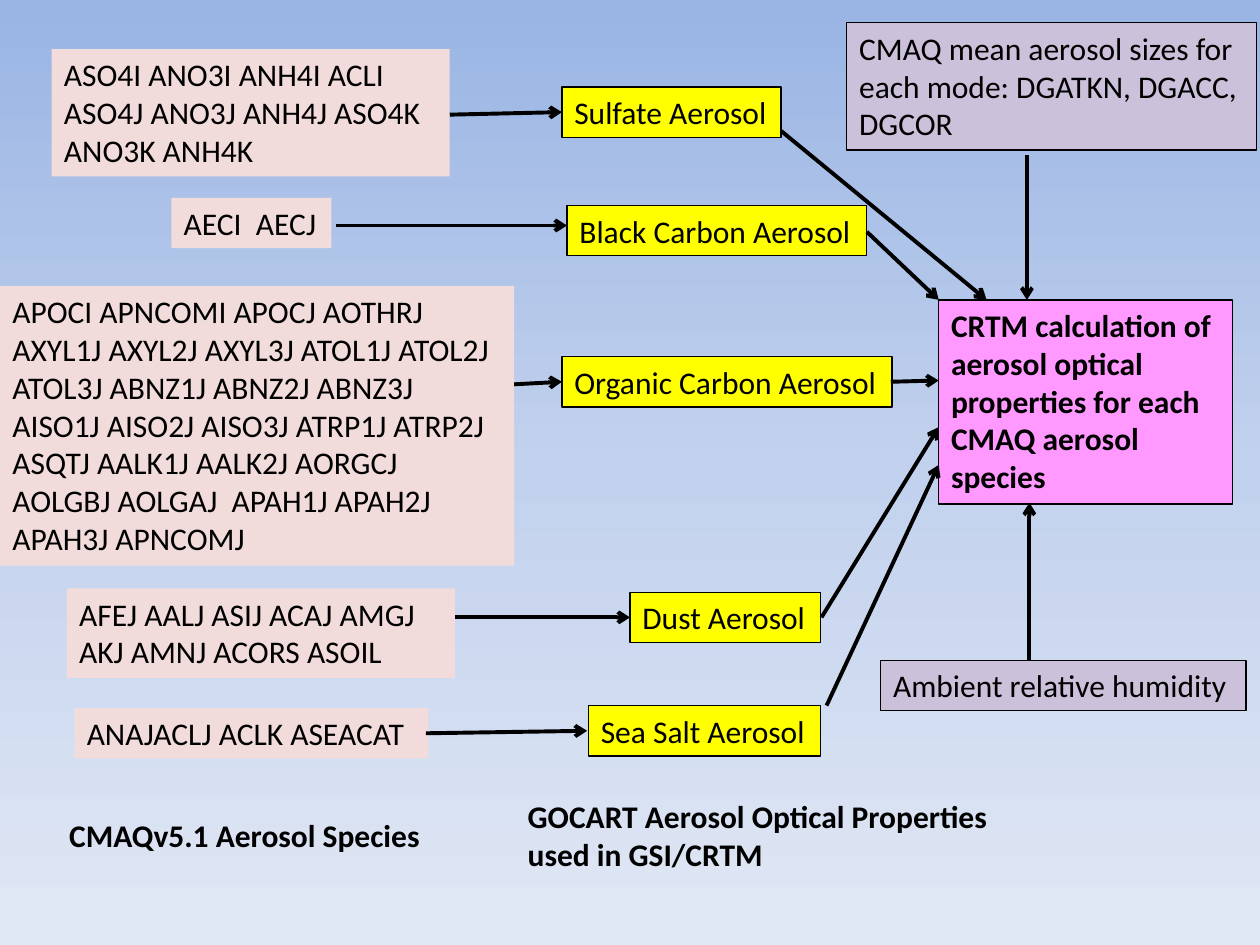
from copy import deepcopy
from dataclasses import dataclass
from typing import Optional

from lxml import etree
from pptx import Presentation
from pptx.dml.color import RGBColor
from pptx.enum.shapes import MSO_CONNECTOR
from pptx.enum.text import MSO_AUTO_SIZE
from pptx.oxml.ns import qn
from pptx.slide import Slide
from pptx.util import Inches, Pt

STRAIGHT = MSO_CONNECTOR.STRAIGHT
FIT_SHAPE = MSO_AUTO_SIZE.SHAPE_TO_FIT_TEXT

BLACK = RGBColor(0x00, 0x00, 0x00)
PINK = RGBColor(0xF2, 0xDC, 0xDB)
YELLOW = RGBColor(0xFF, 0xFF, 0x00)
LAVENDER = RGBColor(0xCC, 0xC1, 0xDA)
MAGENTA = RGBColor(0xFF, 0x99, 0xFF)
SKY_STOPS = (
    (0.0, RGBColor(0x9A, 0xB5, 0xE4)),
    (0.5, RGBColor(0xC2, 0xD1, 0xED)),
    (1.0, RGBColor(0xE1, 0xE8, 0xF5)),
)

FONT_NAME = "Calibri"
FONT_SIZE = Pt(18)
ONE_LINE = 0.4
TWO_LINES = 0.71
THREE_LINES = 1.01


@dataclass(frozen=True)
class Style:
    fill: Optional[RGBColor] = None
    outlined: bool = False
    bold: bool = False


@dataclass(frozen=True)
class Box:
    text: str
    left: float
    top: float
    width: float
    height: float
    style: Style
    wrap: bool = True


@dataclass(frozen=True)
class Arrow:
    start_x: float
    start_y: float
    end_x: float
    end_y: float


SPECIES = Style(PINK)
AEROSOL = Style(YELLOW, outlined=True)
INPUT = Style(LAVENDER, outlined=True)
CALCULATION = Style(MAGENTA, outlined=True, bold=True)
CAPTION = Style(bold=True)

BOXES = (
    Box("APOCI APNCOMI APOCJ AOTHRJ AXYL1J AXYL2J AXYL3J ATOL1J ATOL2J "
        "ATOL3J ABNZ1J ABNZ2J ABNZ3J AISO1J AISO2J AISO3J ATRP1J ATRP2J "
        "ASQTJ AALK1J AALK2J AORGCJ AOLGBJ AOLGAJ  APAH1J APAH2J "
        "APAH3J APNCOMJ", 0, 2.27, 4.08, 2.22, SPECIES),
    Box("Sulfate Aerosol", 4.46, 0.69, 1.74, ONE_LINE, AEROSOL, wrap=False),
    Box("Black Carbon Aerosol", 4.5, 1.63, 2.38, ONE_LINE, AEROSOL, wrap=False),
    Box("Organic Carbon Aerosol", 4.46, 2.83, 2.62, ONE_LINE, AEROSOL, wrap=False),
    Box("Dust Aerosol", 5, 4.7, 1.51, ONE_LINE, AEROSOL, wrap=False),
    Box("Sea Salt Aerosol", 4.67, 5.6, 1.84, ONE_LINE, AEROSOL, wrap=False),
    Box("GOCART Aerosol Optical Properties used in GSI/CRTM",
        4.09, 6.28, 3.86, TWO_LINES, CAPTION),
    Box("ASO4I ANO3I ANH4I ACLI ASO4J ANO3J ANH4J ASO4K ANO3K ANH4K",
        0.41, 0.39, 3.16, THREE_LINES, SPECIES),
    Box("ANAJACLJ ACLK ASEACAT", 0.59, 5.62, 2.81, ONE_LINE, SPECIES, wrap=False),
    Box("AFEJ AALJ ASIJ ACAJ AMGJ AKJ AMNJ ACORS ASOIL",
        0.53, 4.67, 3.08, TWO_LINES, SPECIES),
    Box("AECI  AECJ", 1.36, 1.57, 1.27, ONE_LINE, SPECIES, wrap=False),
    Box("CMAQv5.1 Aerosol Species", 0.45, 6.43, 3.25, ONE_LINE, CAPTION),
    Box("CMAQ mean aerosol sizes for each mode: DGATKN, DGACC, DGCOR",
        6.72, 0.18, 3.25, THREE_LINES, INPUT),
    Box("Ambient relative humidity", 6.99, 5.24, 2.9, ONE_LINE, INPUT),
    Box("CRTM calculation of aerosol optical properties for each CMAQ "
        "aerosol species", 7.45, 2.38, 2.33, 1.62, CALCULATION),
)

SPECIES_ARROWS = (
    Arrow(3.57, 0.91, 4.46, 0.89),
    Arrow(2.67, 1.79, 4.5, 1.79),
    Arrow(4.08, 3.05, 4.46, 3.03),
    Arrow(3.61, 4.9, 5, 4.9),
    Arrow(3.38, 5.82, 4.66, 5.8),
)
CALCULATION_ARROWS = (
    Arrow(7.07, 3.03, 7.45, 3.02),
    Arrow(6.52, 4.9, 7.45, 3.39),
    Arrow(6.56, 5.6, 7.45, 3.69),
    Arrow(6.88, 1.84, 7.45, 2.38),
    Arrow(6.2, 1.04, 7.83, 2.38),
    Arrow(8.15, 1.23, 8.15, 2.38),
    Arrow(8.17, 5.24, 8.17, 3.99),
)


def paint_background(slide: Slide) -> None:
    fill = slide.background.fill
    fill.gradient()
    fill.gradient_angle = 270
    stop_list = slide.element.find(".//" + qn("a:gsLst"))
    while len(stop_list) < len(SKY_STOPS):
        stop_list.append(deepcopy(stop_list[0]))
    for stop, (position, color) in zip(fill.gradient_stops, SKY_STOPS):
        stop.position = position
        stop.color.rgb = color


def add_box(slide: Slide, box: Box) -> None:
    shape = slide.shapes.add_textbox(
        Inches(box.left), Inches(box.top), Inches(box.width), Inches(box.height)
    )
    if box.style.fill is not None:
        shape.fill.solid()
        shape.fill.fore_color.rgb = box.style.fill
    if box.style.outlined:
        shape.line.color.rgb = BLACK
        shape.line.width = Pt(0.75)
    text_frame = shape.text_frame
    text_frame.text = box.text
    text_frame.word_wrap = box.wrap
    text_frame.auto_size = FIT_SHAPE
    font = text_frame.paragraphs[0].runs[0].font
    font.name = FONT_NAME
    font.size = FONT_SIZE
    font.bold = box.style.bold
    font.color.rgb = BLACK


def add_arrow(slide: Slide, arrow: Arrow) -> None:
    connector = slide.shapes.add_connector(
        STRAIGHT,
        Inches(arrow.start_x), Inches(arrow.start_y),
        Inches(arrow.end_x), Inches(arrow.end_y),
    )
    connector.line.color.rgb = BLACK
    connector.line.width = Pt(2.25)
    properties = connector.element.spPr
    outline = properties.find(qn("a:ln"))
    etree.SubElement(outline, qn("a:tailEnd"), type="arrow")
    etree.SubElement(properties, qn("a:effectLst"))


def main() -> None:
    presentation = Presentation()
    presentation.slide_width = Inches(10)
    presentation.slide_height = Inches(7.5)
    slide = presentation.slides.add_slide(presentation.slide_layouts[6])
    paint_background(slide)
    for box in BOXES:
        add_box(slide, box)
    for arrow in SPECIES_ARROWS + CALCULATION_ARROWS:
        add_arrow(slide, arrow)
    presentation.save("out.pptx")


if __name__ == "__main__":
    main()
